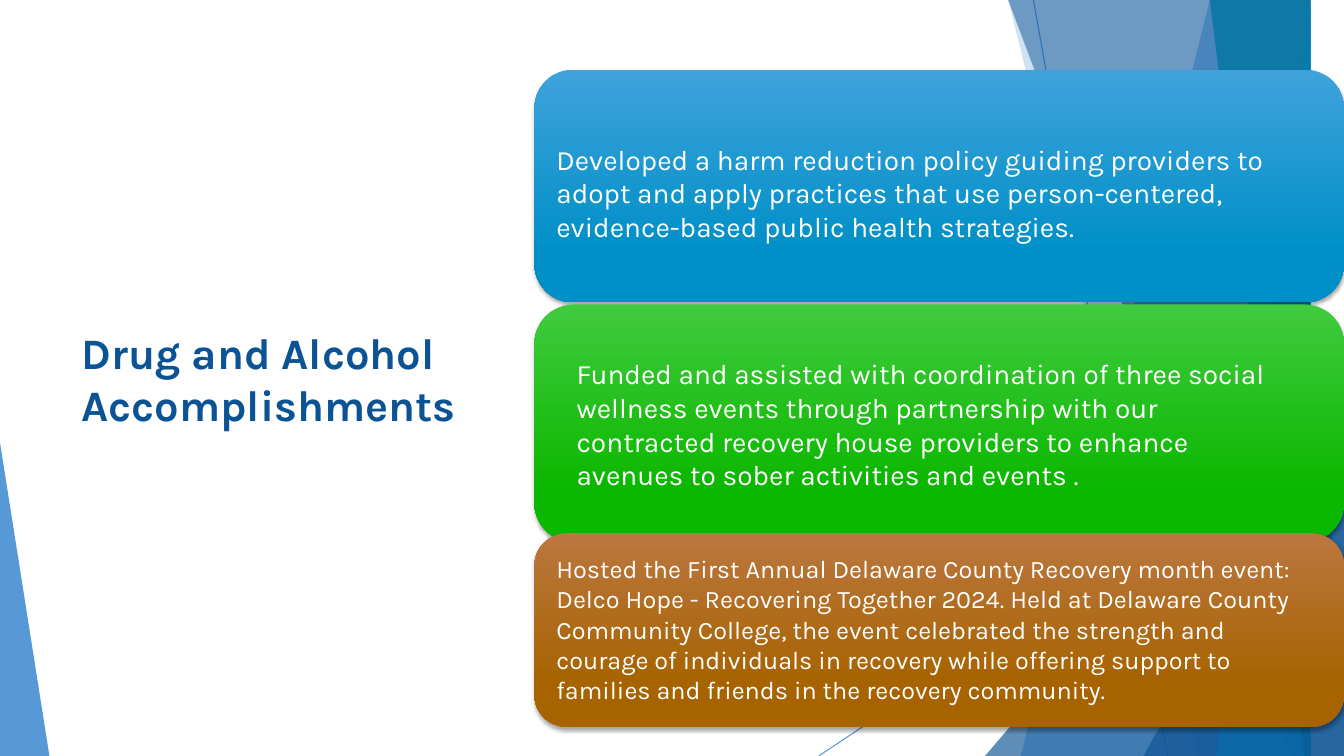
import pptx
import pptx.util
import pptx.dml.color
import pptx.enum.shapes
import pptx.enum.text
import pptx.oxml
import pptx.oxml.ns
from lxml import etree

RGB = pptx.dml.color.RGBColor
SHAPE = pptx.enum.shapes.MSO_SHAPE
TEXT = pptx.enum.text
Inches, Pt = pptx.util.Inches, pptx.util.Pt
qn = pptx.oxml.ns.qn

# Content and colours
WHITE, NAVY, BLUE = RGB(255, 255, 255), RGB(0x0B, 0x53, 0x94), RGB(0x0F, 0x6F, 0xC6)
SKY, TEAL = RGB(0x00, 0x9D, 0xD9), RGB(0x00, 0x76, 0xA3)
FONT = "Karla"
W, H = 13.33, 7.5
TITLE = "Drug and Alcohol Accomplishments"

# Card: text, size, top, height, gradient colours, text inset left and width, text top
CARDS = [
    ("Developed a harm reduction policy guiding providers to adopt and apply practices that use "
     "person-centered, evidence-based public health strategies.",
     20, 0.69, 2.31, RGB(0x3F, 0xA2, 0xDB), RGB(0x00, 0x90, 0xC7), 0.12, 7.7, 1.36, 1.11),
    ("Funded and assisted with coordination of three social wellness events through partnership "
     "with our contracted recovery house providers to enhance avenues to sober activities and events .",
     20, 3.02, 2.36, RGB(0x40, 0xCB, 0x3F), RGB(0x0C, 0xB7, 0x00), 0.32, 7.3, 3.49, 1.45),
    ("Hosted the First Annual Delaware County Recovery month event: Delco Hope - Recovering "
     "Together 2024. Held at Delaware County Community College, the event celebrated the strength "
     "and courage of individuals in recovery while offering support to families and friends in the "
     "recovery community.",
     18, 5.29, 1.92, RGB(0xBB, 0x77, 0x3F), RGB(0xA7, 0x63, 0x00), 0.12, 7.7, 5.44, 1.62),
]
CARD_LEFT = 5.3

# Background, back to front; bands and peaks run to the right edge
RAYS = [(10.25, 0, 11.58, H), (W, 4.03, 8.12, H)]
FACETS = [  # kind, (top x, bottom x) or (left, top, width, apex), colour, opacity %
    ("band", (12.28, 10.04), BLUE, 36),
    ("band", (10.5, 11.83), BLUE, 20),
    ("peak", (9.77, 3.33, W - 9.77, 1), NAVY, 66),
    ("band", (10.21, 12.91), NAVY, 50),
    ("band", (13.03, 11.92), SKY, 70),
    ("band", (11.96, 13.18), TEAL, 80),
    ("peak", (11.34, 3.93, W - 11.34, 1), NAVY, 66),
    ("peak", (0, 4.39, 0.49, 0), BLUE, 70),
]


def set_alpha(parent, percent):
    for clr in parent.iter(qn("a:srgbClr")):
        etree.SubElement(clr, qn("a:alpha"), val=str(percent * 1000))


def add_ray(s, x1, y1, x2, y2):
    c = s.shapes.add_connector(pptx.enum.shapes.MSO_CONNECTOR.STRAIGHT,
                               *map(Inches, (x1, y1, x2, y2)))
    c.line.color.rgb = BLUE
    c.line.width = Pt(0.75)
    set_alpha(c.line._ln, 70)
    etree.SubElement(c._element.spPr, qn("a:effectLst"))


def add_facet(s, kind, geometry, color, opacity):
    if kind == "band":
        top, bottom = geometry
        fb = s.shapes.build_freeform(top, 0, scale=Inches(1))
        fb.add_line_segments([(W, 0), (W, H), (bottom, H)], close=True)
        sp = fb.convert_to_shape()
    else:
        left, top, width, apex = geometry
        sp = s.shapes.add_shape(SHAPE.ISOSCELES_TRIANGLE,
                                *map(Inches, (left, top, width, H - top)))
        sp.adjustments[0] = apex
    sp.shadow.inherit = False
    sp.fill.solid()
    sp.fill.fore_color.rgb = color
    set_alpha(sp._element.spPr, opacity)
    sp.line.fill.background()


def add_run(p, text, size, color):
    r = p.add_run()
    r.text = text
    r.font.name, r.font.size = FONT, Pt(size)
    r.font.color.rgb = color
    return r


def add_card(s, top, height, light, dark):
    sp = s.shapes.add_shape(SHAPE.ROUNDED_RECTANGLE,
                            *map(Inches, (CARD_LEFT, top, W - CARD_LEFT, height)))
    sp.fill.gradient()
    sp.fill.gradient_angle = 270
    for stop, color, position in zip(sp.fill.gradient_stops, (light, dark), (0, 0.78)):
        stop.color.rgb = color
        stop.position = position
    sp.line.fill.background()
    sp.shadow.inherit = False
    effects = sp._element.spPr.find(qn("a:effectLst"))
    shadow = etree.SubElement(effects, qn("a:outerShdw"), blurRad=str(Pt(3)), dist=str(Pt(2)),
                              dir="5400000", algn="ctr", rotWithShape="0")
    etree.SubElement(shadow, qn("a:srgbClr"), val="000000")
    set_alpha(shadow, 35)


def add_card_text(s, text, size, left, top, width, height):
    tf = s.shapes.add_textbox(*map(Inches, (left, top, width, height))).text_frame
    tf.word_wrap = True
    tf.auto_size = TEXT.MSO_AUTO_SIZE.SHAPE_TO_FIT_TEXT
    add_run(tf.paragraphs[0], text, size, WHITE)


def add_title(s):
    title = s.shapes.title
    title.left, title.top, title.width, title.height = map(Inches, (0.71, 1.51, 4.2, 4.48))
    tf = title.text_frame
    tf.word_wrap = True
    tf.auto_size = TEXT.MSO_AUTO_SIZE.NONE
    tf.vertical_anchor = TEXT.MSO_ANCHOR.MIDDLE
    p = tf.paragraphs[0]
    p.alignment = TEXT.PP_ALIGN.LEFT
    r = add_run(p, TITLE, 31, NAVY)
    r.font.bold = True
    # White letter outline
    outline = etree.Element(qn("a:ln"), w=str(Pt(0.83)))
    fill = etree.SubElement(outline, qn("a:solidFill"))
    etree.SubElement(fill, qn("a:srgbClr"), val=str(WHITE))
    r.font._element.insert(0, outline)


def main():
    prs = pptx.Presentation()
    prs.slide_width, prs.slide_height = Inches(W), Inches(H)
    s = prs.slides.add_slide(prs.slide_layouts[5])
    # Background
    for ray in RAYS:
        add_ray(s, *ray)
    for facet in FACETS:
        add_facet(s, *facet)
    # Title and cards
    add_title(s)
    for _, _, top, height, light, dark, *_ in CARDS:
        add_card(s, top, height, light, dark)
    for text, size, *_, inset, width, text_top, text_height in CARDS:
        add_card_text(s, text, size, CARD_LEFT + inset, text_top, width, text_height)
    prs.save("out.pptx")


if __name__ == "__main__":
    main()
